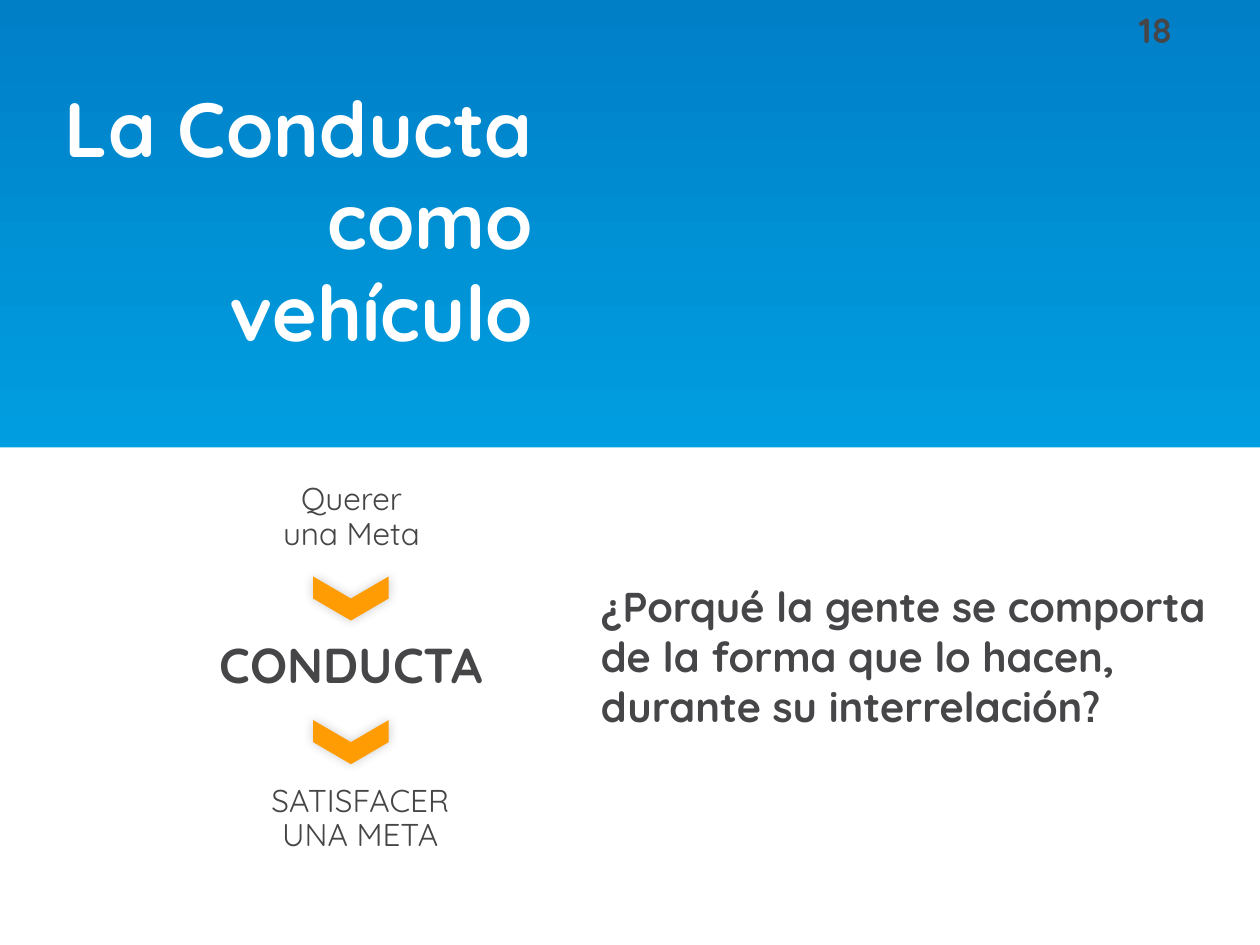
"""Build the slide on behaviour as the vehicle towards a goal."""
from lxml import etree
from pptx import Presentation
from pptx import util as u
from pptx.dml.color import RGBColor
from pptx.enum import shapes, text
from pptx.oxml import parse_xml

THEME = {
    "font": "Quicksand",
    "ink": RGBColor.from_string("464649"),
    "white": RGBColor.from_string("FFFFFF"),
    "accent": RGBColor.from_string("FF9C03"),
    "sky": RGBColor.from_string("00B3F0"),
    "deep": RGBColor.from_string("007FC7"),
    "title": 44, "key": 28, "question": 23.8, "number": 20, "step": 18,
}
ALIGN = text.PP_ALIGN
SHADOW = (
    '<a:effectLst xmlns:a="http://schemas.openxmlformats.org/drawingml/2006/main">'
    '<a:outerShdw blurRad="76200" dist="0" dir="13500000" rotWithShape="0">'
    '<a:srgbClr val="000000"><a:alpha val="20000"/></a:srgbClr>'
    '</a:outerShdw></a:effectLst>'
)

prs = Presentation()
prs.slide_width, prs.slide_height = u.Inches(10), u.Inches(7.5)
COL, ROW = prs.slide_width / 100, prs.slide_height / 75
s = prs.slides.add_slide(prs.slide_layouts[6])


def area(left, top, width, height):
    return [int(v) for v in (left * COL, top * ROW, width * COL, height * ROW)]


def add_text(lines, box, size, color=THEME["ink"], bold=False, align=ALIGN.LEFT,
             spacing=1.0, anchor=text.MSO_ANCHOR.TOP):
    tf = s.shapes.add_textbox(*area(*box)).text_frame
    tf.word_wrap = True
    tf.vertical_anchor = anchor
    for i, line in enumerate(lines.split("\n")):
        p = tf.paragraphs[0] if i == 0 else tf.add_paragraph()
        p.alignment, p.line_spacing = align, spacing
        r = p.add_run()
        r.text = line
        r.font.name, r.font.size = THEME["font"], u.Pt(THEME[size])
        r.font.bold, r.font.color.rgb = bold, color
    return p


header = s.shapes.add_shape(shapes.MSO_SHAPE.RECTANGLE, *area(0, 0, 100, 57.4))
header.fill.gradient()
header.fill.gradient_angle = 90
for stop, color, place in zip(header.fill.gradient_stops,
                              (THEME["sky"], THEME["deep"]), (0, 1)):
    stop.color.rgb, stop.position = color, place

panel = s.shapes.add_shape(shapes.MSO_SHAPE.RECTANGLE, *area(0, 35.5, 100, 32.5))
panel.fill.solid()
panel.fill.fore_color.rgb = THEME["white"]
for sp in (header, panel):
    sp.line.fill.background()
    sp.shadow.inherit = False

add_text("18", (89.4, 0.2, 9.4, 4.4), "number", bold=True)
add_text("La Conducta como vehículo", (0, 0, 43.3, 34.7), "title", THEME["white"],
         bold=True, align=ALIGN.RIGHT, anchor=text.MSO_ANCHOR.MIDDLE)
p = add_text("¿Porqué la gente se comporta de la forma que lo hacen, "
             "durante su interrelación", (46.7, 45.6, 51.8, 10.8), "question", bold=True)
r = p.add_run()
r.text = "?"
r.font.name, r.font.size = "Cabin", u.Pt(THEME["question"])
r.font.bold, r.font.color.rgb = True, THEME["ink"]

for label, box, size, bold in (
    ("Querer\nuna Meta", (19.1, 37.9, 17.6, 6.5), "step", False),
    ("CONDUCTA", (14.1, 50.4, 27.6, 5.3), "key", True),
    ("SATISFACER UNA META", (19.1, 61.8, 19, 6.5), "step", False),
):
    add_text(label, box, size, bold=bold, align=ALIGN.CENTER, spacing=0.9)

for top in (44.5, 55.9):
    sp = s.shapes.add_shape(shapes.MSO_SHAPE.CHEVRON, *area(26.1, top, 3.5, 6))
    sp.rotation = 90
    sp.fill.solid()
    sp.fill.fore_color.rgb = THEME["accent"]
    sp.line.fill.background()
    sp.shadow.inherit = False
    effects = sp.element.spPr.find("{*}effectLst")
    sp.element.spPr.replace(effects, parse_xml(etree.tostring(etree.fromstring(SHADOW))))

prs.save("out.pptx")
